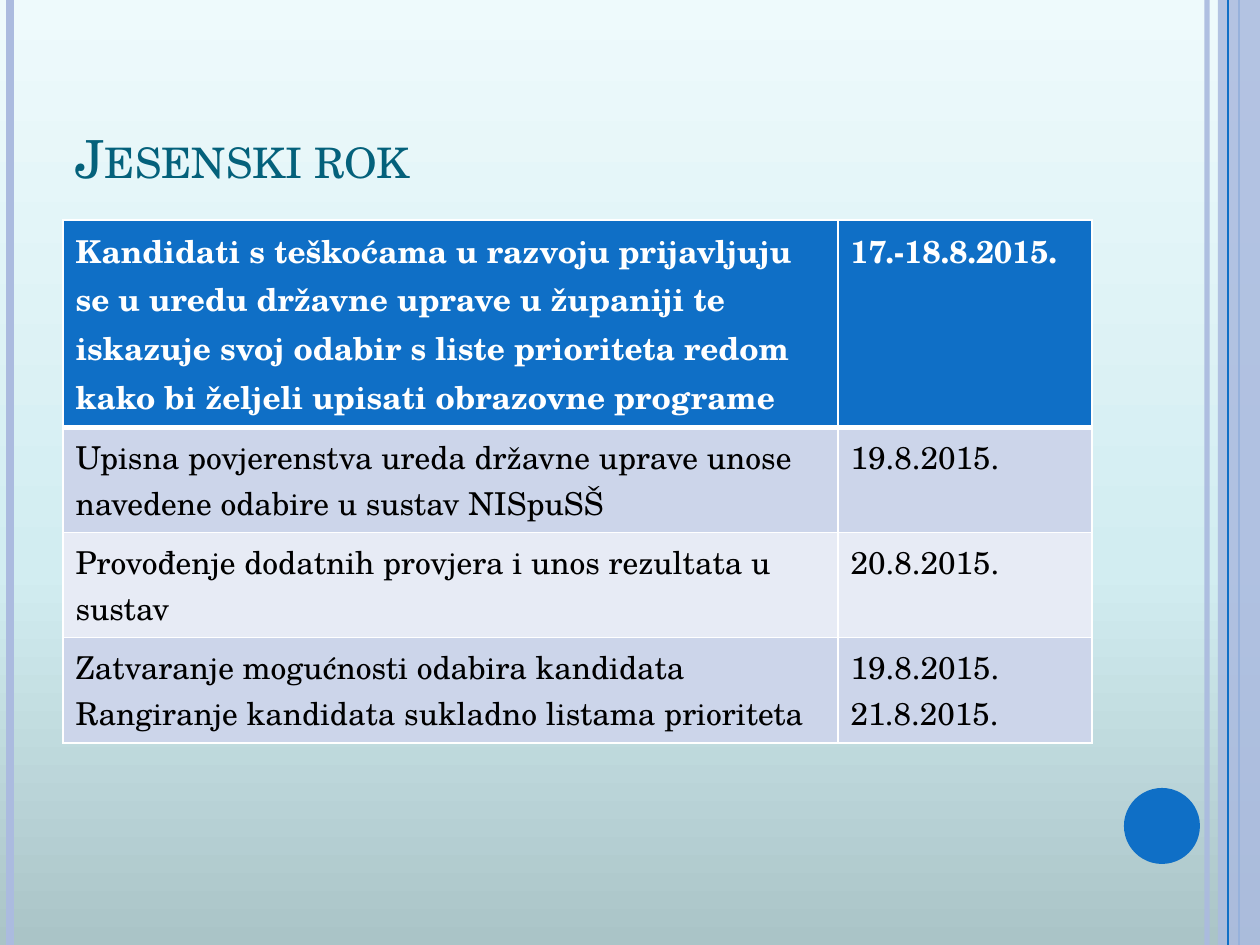
import copy

import pptx
import pptx.dml.color
import pptx.enum.shapes
import pptx.enum.text
import pptx.oxml
import pptx.oxml.ns
import pptx.util

RGBColor = pptx.dml.color.RGBColor
qn = pptx.oxml.ns.qn

PX = 914400 // 126
WIDTH, HEIGHT = 1260, 945
FONT = "TeX Gyre Schola"

BLUE = RGBColor(0x0F, 0x6F, 0xC6)
LAVENDER = RGBColor(0xAB, 0xBB, 0xDF)
TEAL = RGBColor(0x04, 0x61, 0x7B)
WHITE = RGBColor(0xFF, 0xFF, 0xFF)
BLACK = RGBColor(0x00, 0x00, 0x00)
BAND_DARK = RGBColor(0xCC, 0xD5, 0xEA)
BAND_LIGHT = RGBColor(0xE7, 0xEB, 0xF5)
SKY = [
    (0, RGBColor(0xAA, 0xC4, 0xC7)),
    (0.4, RGBColor(0xD2, 0xED, 0xF1)),
    (1, RGBColor(0xEE, 0xFA, 0xFC)),
]

SCHEDULE = [
    ("Kandidati s teškoćama u razvoju prijavljuju se u uredu državne uprave "
     "u županiji te iskazuje svoj odabir s liste prioriteta redom kako bi "
     "željeli upisati obrazovne programe", "17.-18.8.2015."),
    ("Upisna povjerenstva ureda državne uprave unose navedene odabire "
     "u sustav NISpuSŠ", "19.8.2015."),
    ("Provođenje dodatnih provjera i unos rezultata u sustav", "20.8.2015."),
    ("Zatvaranje mogućnosti odabira kandidata\n"
     "Rangiranje kandidata sukladno listama prioriteta",
     "19.8.2015.\n21.8.2015."),
]
COLUMN_WIDTHS = [775, 254]
ROW_HEIGHTS = [206, 105, 105, 105]


def px(*lengths):
    return [pptx.util.Emu(length * PX) for length in lengths]


def set_opacity(properties, percent):
    """Make the first RGB colour inside the XML properties translucent."""
    color = next(properties.iter(qn("a:srgbClr")))
    color.append(pptx.oxml.parse_xml(
        f'<a:alpha {pptx.oxml.ns.nsdecls("a")} val="{percent * 1000}"/>'))


def paint_background(slide):
    fill = slide.background.fill
    fill.gradient()
    fill.gradient_angle = 90
    stop_list = next(slide.element.iter(qn("a:gsLst")))
    stop_list.append(copy.deepcopy(stop_list[0]))
    for stop, (position, color) in zip(fill.gradient_stops, SKY):
        stop.position = position
        stop.color.rgb = color


def add_stripe(slide, x, color, weight, opacity=100):
    """Draw a vertical line over the full height of the slide."""
    stripe = slide.shapes.add_connector(
        pptx.enum.shapes.MSO_CONNECTOR.STRAIGHT, *px(x, 0, x, HEIGHT))
    stripe.line.color.rgb = color
    stripe.line.width = pptx.util.Pt(weight)
    properties = stripe.element.spPr
    if opacity < 100:
        set_opacity(properties, opacity)
    properties.append(pptx.oxml.parse_xml(
        f'<a:effectLst {pptx.oxml.ns.nsdecls("a")}/>'))


def add_plain_shape(slide, kind, box, color, opacity=100):
    shape = slide.shapes.add_shape(kind, *px(*box))
    shape.shadow.inherit = False
    shape.fill.solid()
    shape.fill.fore_color.rgb = color
    shape.line.fill.background()
    if opacity < 100:
        set_opacity(shape.element.spPr, opacity)


def add_decoration(slide):
    kinds = pptx.enum.shapes.MSO_SHAPE
    add_stripe(slide, 1207, LAVENDER, 3, 93)
    add_stripe(slide, 10, LAVENDER, 4.5)
    add_stripe(slide, 1239, BLUE, 0.75)
    add_plain_shape(slide, kinds.RECTANGLE, (1218, 0, 42, HEIGHT), LAVENDER, 87)
    add_stripe(slide, 1228, BLUE, 1)
    add_plain_shape(slide, kinds.OVAL, (1124, 788, 76, 76), BLUE)


def format_paragraph(paragraph, size, color, bold=False):
    font = paragraph.font
    font.name = FONT
    font.size = pptx.util.Pt(size)
    font.color.rgb = color
    font.bold = bold


def add_title(slide, text):
    title = slide.shapes.title
    title.left, title.top, title.width, title.height = px(63, 38, 1029, 157)
    frame = title.text_frame
    frame.text = text
    frame.vertical_anchor = pptx.enum.text.MSO_ANCHOR.BOTTOM
    heading = frame.paragraphs[0]
    heading.alignment = pptx.enum.text.PP_ALIGN.LEFT
    format_paragraph(heading, 30, TEAL)
    heading.runs[0].font._element.set("cap", "small")


def set_borders(cell, weights):
    """Draw white borders; weights are points for left, right, top, bottom."""
    properties = cell._tc.get_or_add_tcPr()
    for index, (side, weight) in enumerate(zip("LRTB", weights)):
        properties.insert(index, pptx.oxml.parse_xml(
            f'<a:ln{side} {pptx.oxml.ns.nsdecls("a")} w="{weight * 12700}">'
            f'<a:solidFill><a:srgbClr val="{WHITE}"/></a:solidFill>'
            f'</a:ln{side}>'))


def add_schedule(slide):
    table = slide.shapes.add_table(
        len(SCHEDULE), len(COLUMN_WIDTHS),
        *px(63, 220, sum(COLUMN_WIDTHS), sum(ROW_HEIGHTS))).table
    for column, width in zip(table.columns, px(*COLUMN_WIDTHS)):
        column.width = width
    for row, height in zip(table.rows, px(*ROW_HEIGHTS)):
        row.height = height
    for r, entries in enumerate(SCHEDULE):
        header = r == 0
        band = BLUE if header else BAND_DARK if r % 2 else BAND_LIGHT
        for c, text in enumerate(entries):
            cell = table.cell(r, c)
            cell.text = text
            cell.fill.solid()
            cell.fill.fore_color.rgb = band
            set_borders(cell, (1, 1, 3 if r == 1 else 1, 3 if header else 1))
            for paragraph in cell.text_frame.paragraphs:
                format_paragraph(paragraph, 18, WHITE if header else BLACK, header)


def main():
    deck = pptx.Presentation()
    deck.slide_width, deck.slide_height = px(WIDTH, HEIGHT)
    slide = deck.slides.add_slide(deck.slide_layouts.get_by_name("Title Only"))
    paint_background(slide)
    add_decoration(slide)
    add_title(slide, "Jesenski rok")
    add_schedule(slide)
    deck.save("out.pptx")


if __name__ == "__main__":
    main()
